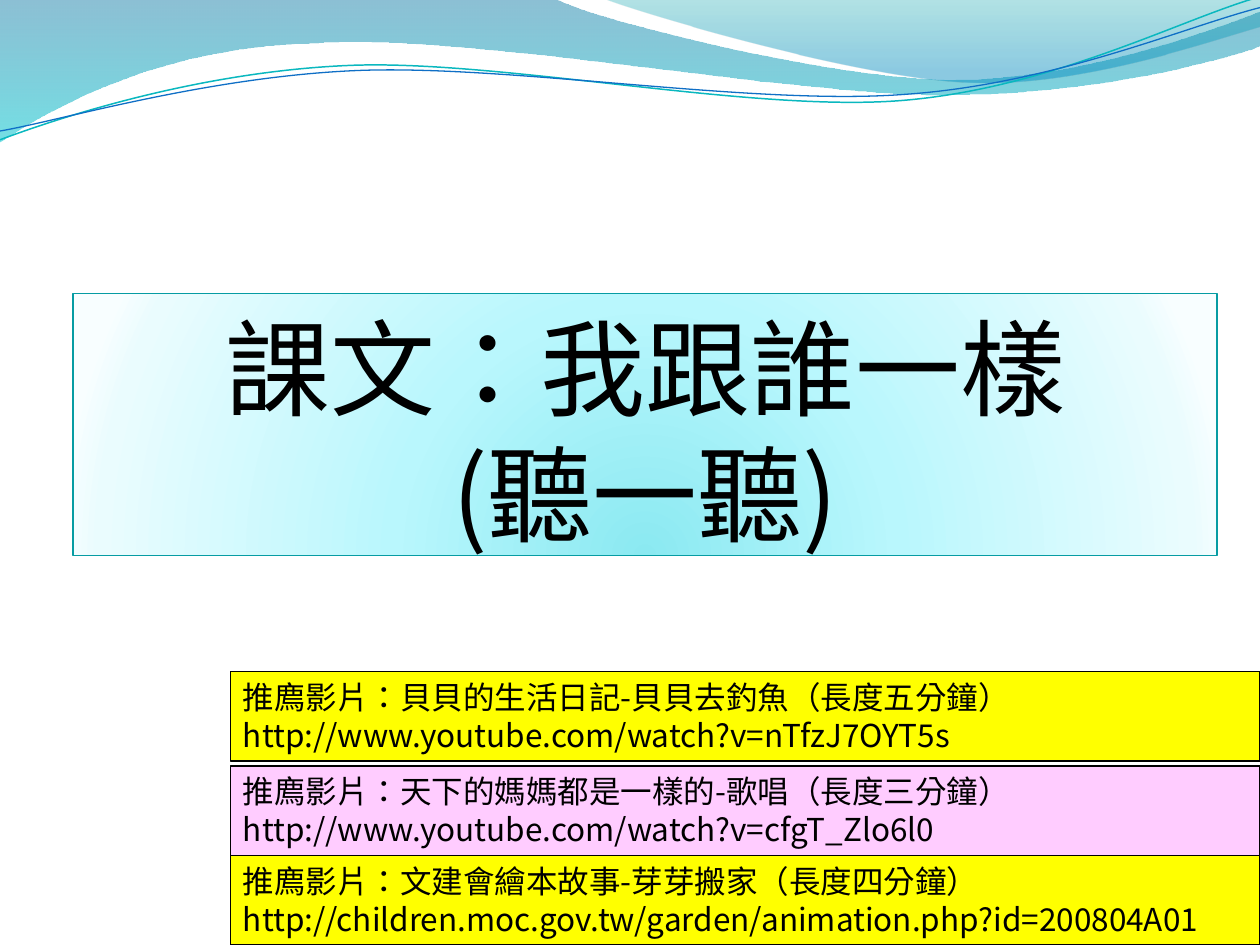
from math import cos, radians, sin

from pptx import Presentation
from pptx.dml.color import RGBColor
from pptx.enum.shapes import MSO_SHAPE as SHAPE
from pptx.enum.text import MSO_ANCHOR as ANCHOR, MSO_AUTO_SIZE as AUTO, PP_ALIGN as ALIGN
from pptx.oxml import parse_xml
from pptx.oxml.ns import nsdecls, qn
from pptx.util import Inches, Pt

FONT = "Noto Sans CJK SC"
NS = nsdecls("a")
rgb = RGBColor.from_string


def set_gradient(shape, stops, direction):
    """Stops are (position %, colour, opacity %)."""
    shape.fill.gradient()
    old = shape.element.spPr.find(qn("a:gradFill"))
    gs = "".join(
        f'<a:gs pos="{pos * 1000}"><a:srgbClr val="{color}">'
        f'<a:alpha val="{alpha * 1000}"/></a:srgbClr></a:gs>'
        for pos, color, alpha in stops)
    new = parse_xml(f'<a:gradFill {NS} rotWithShape="1">'
                    f'<a:gsLst>{gs}</a:gsLst>{direction}</a:gradFill>')
    old.getparent().replace(old, new)


def set_text(shape, text, size, align):
    tf = shape.text_frame
    tf.word_wrap = True
    tf.text = text
    p = tf.paragraphs[0]
    p.alignment = align
    for r in p.runs:
        r.font.name, r.font.size = FONT, Pt(size)
        r.font.color.rgb = rgb("000000")
        rpr = r._r.get_or_add_rPr()
        rpr.set("lang", "zh-TW")
        rpr.find(qn("a:latin")).addnext(parse_xml(f'<a:ea {NS} typeface="{FONT}"/>'))
    return tf


prs = Presentation()
prs.slide_width, prs.slide_height = Inches(10), Inches(7.5)
s = prs.slides.add_slide(prs.slide_layouts[5])

# Waves: box, tilt, gradient or line, then points (2 numbers: line, 6: Bézier curve)
DOWN = '<a:lin ang="5400000" scaled="0"/>'
waves = [
    ((-.01, -.01, 10.02, 1.14), 0, [(0, "0074A1", 45), (100, "00C6CF", 55)], None,
     [(0, 0), (4.4, -.01), (4.76, .17, 6.64, .63, 7.58, .63),
      (8.53, .63, 9.58, .26, 10, .09), (10.01, .36),
      (9.83, .44, 8.7, .76, 7.46, .75), (6.22, .75, 3.82, .28, 2.57, .34),
      (1.29, .36, .46, .83, -.01, 1.13), (0, 0)]),
    ((4.79, -.01, 5.21, .7), 0, [(0, "00A1A9", 30), (80, "008BBF", 45)], None,
     [(4.79, -.01), (5.09, .11, 6.82, .62, 7.69, .65),
      (8.56, .69, 9.61, .32, 10, .21), (10, 0), (4.79, -.01)]),
    ((-.02, .22, 10.02, .71), -2.7, None, ("0AB8BF", .85),
     [(0, 1.11), (.48, .93, 1.58, .57, 2.77, .52),
      (3.95, .47, 5.93, .89, 7.13, .8), (8.33, .71, 9.38, .15, 9.98, -.02)]),
    ((-.02, .3, 10.03, .58), -2.7, None, ("0F6FC6", .75),
     [(0, 1.04), (.47, .96, 1.64, .61, 2.83, .56),
      (4.03, .51, 5.97, .84, 7.17, .75), (8.36, .67, 9.41, .21, 10, .06)]),
]
for (x, y, w, h), tilt, stops, line, pieces in waves:
    builder = s.shapes.build_freeform(0, 0)
    builder.add_line_segments([(Inches(w), Inches(h))], close=False)
    sp = builder.convert_to_shape()
    sp.left, sp.top, sp.width, sp.height = map(Inches, (x, y, w, h))
    sp.rotation = tilt
    # Points are as seen on the slide: turn them back into the untilted box
    c, d = cos(radians(-tilt)), sin(radians(-tilt))
    path_xml = ""
    for i, piece in enumerate(pieces):
        pts = ""
        for px, py in zip(piece[::2], piece[1::2]):
            dx, dy = px - x - w / 2, py - y - h / 2
            pts += (f'<a:pt x="{Inches(w / 2 + dx * c - dy * d)}" '
                    f'y="{Inches(h / 2 + dx * d + dy * c)}"/>')
        tag = "moveTo" if i == 0 else "lnTo" if len(piece) == 2 else "cubicBezTo"
        path_xml += f"<a:{tag}>{pts}</a:{tag}>"
    if stops:
        path_xml += "<a:close/>"
    outline = sp.element.spPr.find(qn("a:custGeom")).find(qn("a:pathLst"))
    outline.replace(outline[0], parse_xml(
        f'<a:path {NS} w="{Inches(w)}" h="{Inches(h)}">{path_xml}</a:path>'))
    sp.shadow.inherit = False
    if stops:
        set_gradient(sp, stops, DOWN)
        sp.line.fill.background()
    else:
        sp.fill.background()
        sp.line.color.rgb, sp.line.width = rgb(line[0]), Pt(line[1])

# Title, in front of the waves
title = s.shapes.title
title.element.getparent().append(title.element)
title.left, title.top, title.width, title.height = map(Inches, (.58, 2.33, 9.08, 2.08))
set_gradient(title, [(0, "8BE9F1", 100), (43, "B9F7FD", 100),
                     (93, "EAFCFE", 100), (100, "F8FEFF", 100)],
             '<a:path path="circle"><a:fillToRect l="50000" t="130000" '
             'r="50000" b="-30000"/></a:path>')
title.line.color.rgb, title.line.width = rgb("069CA3"), Pt(.75)
title.shadow.inherit = False
tf = set_text(title, "課文：我跟誰一樣\v(聽一聽)", 60, ALIGN.CENTER)
tf.auto_size, tf.vertical_anchor = AUTO.NONE, ANCHOR.BOTTOM
tf.margin_left = tf.margin_right = tf.margin_bottom = 0
tf.margin_top = Inches(.05)

# Recommended films
films = [
    (6.79, "FFFF00", "推廌影片：文建會繪本故事-芽芽搬家（長度四分鐘） "
     "http://children.moc.gov.tw/garden/animation.php?id=200804A01"),
    (6.08, "FFCCFF", "推廌影片：天下的媽媽都是一樣的-歌唱（長度三分鐘） "
     "http://www.youtube.com/watch?v=cfgT_Zlo6l0"),
    (5.33, "FFFF00", "推廌影片：貝貝的生活日記-貝貝去釣魚（長度五分鐘） "
     "http://www.youtube.com/watch?v=nTfzJ7OYT5s"),
]
for top, color, text in films:
    sp = s.shapes.add_shape(SHAPE.RECTANGLE, *map(Inches, (1.83, top, 8.17, .71)))
    sp.shadow.inherit = False
    sp.fill.solid()
    sp.fill.fore_color.rgb = rgb(color)
    sp.line.color.rgb, sp.line.width = rgb("000000"), Pt(.75)
    tf = set_text(sp, text, 18, ALIGN.LEFT)
    tf.auto_size, tf.vertical_anchor = AUTO.SHAPE_TO_FIT_TEXT, ANCHOR.TOP

prs.save("out.pptx")
